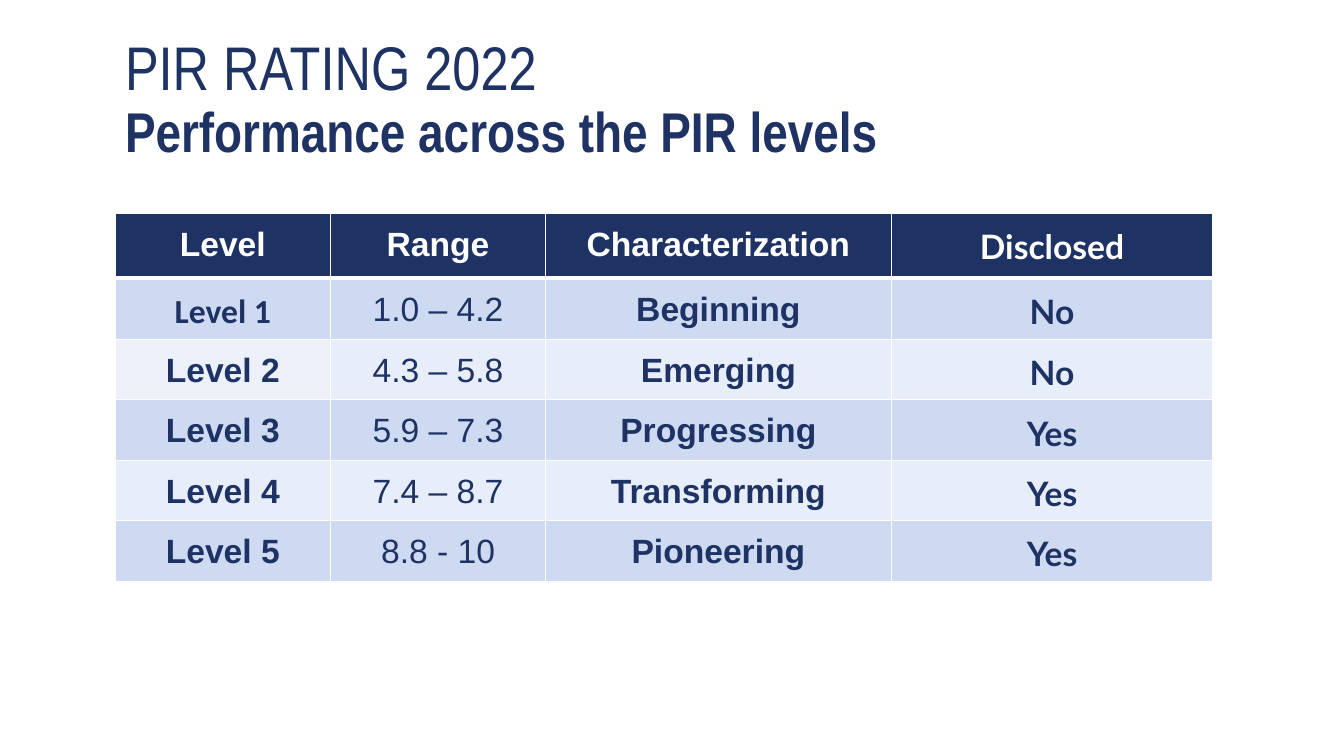
from lxml import etree
from pptx import Presentation
from pptx.dml.color import RGBColor
from pptx.enum.text import MSO_ANCHOR, MSO_AUTO_SIZE, PP_ALIGN
from pptx.oxml.ns import qn
from pptx.util import Inches, Pt

NAVY = RGBColor(0x1E, 0x32, 0x63)
WHITE = RGBColor(0xFF, 0xFF, 0xFF)
BAND = RGBColor(0xCD, 0xDA, 0xF2)
PALE_BAND = RGBColor(0xE7, 0xED, 0xF9)

COLUMN_WIDTHS = [2.14, 2.13, 3.43, 3.19]
COLUMN_FONTS = ["Arial", "Arial", "Arial", "Lato"]
HEADER_HEIGHT, LEVEL_HEIGHT = 0.64, 0.6
LEVELS = [
    ("Level", "Range", "Characterization", "Disclosed"),
    ("Level 1", "1.0 – 4.2", "Beginning", "No"),
    ("Level 2", "4.3 – 5.8", "Emerging", "No"),
    ("Level 3", "5.9 – 7.3", "Progressing", "Yes"),
    ("Level 4", "7.4 – 8.7", "Transforming", "Yes"),
    ("Level 5", "8.8 - 10", "Pioneering", "Yes"),
]
FIRST_COLUMN_OPACITY = {2: 40, 4: 46}


class RatingSlide:
    def __init__(self, presentation):
        self.slide = presentation.slides.add_slide(presentation.slide_layouts[5])
        self.title_font = "Arial Narrow"
        self.cell_size = Pt(24)
        self.cell_margin = Inches(0.07)

    def add_title(self, heading, subheading):
        title = self.slide.shapes.title
        title.left, title.top = Inches(1.14), Inches(0.28)
        title.width, title.height = Inches(11.38), Inches(1.45)
        frame = title.text_frame
        frame.auto_size = MSO_AUTO_SIZE.NONE
        frame.word_wrap = True
        frame.vertical_anchor = MSO_ANCHOR.MIDDLE
        paragraph = frame.paragraphs[0]
        paragraph.alignment = PP_ALIGN.LEFT
        paragraph.line_spacing = 0.9
        for text, size, bold in [(heading, 44, False), (subheading, 40, True)]:
            if paragraph.runs:
                paragraph.add_line_break()
            run = paragraph.add_run()
            run.text = text
            run.font.name = self.title_font
            run.font.size = Pt(size)
            run.font.bold = bold
            run.font.color.rgb = NAVY

    def add_levels_table(self, rows):
        height = HEADER_HEIGHT + LEVEL_HEIGHT * (len(rows) - 1)
        table = self.slide.shapes.add_table(
            len(rows), len(COLUMN_WIDTHS), Inches(1.14), Inches(2.12),
            Inches(sum(COLUMN_WIDTHS)), Inches(height)).table
        table.horz_banding = False
        for column, width in zip(table.columns, COLUMN_WIDTHS):
            column.width = Inches(width)
        for r, values in enumerate(rows):
            table.rows[r].height = Inches(LEVEL_HEIGHT if r else HEADER_HEIGHT)
            for c, value in enumerate(values):
                cell = table.cell(r, c)
                self.fill_cell(cell, r, c)
                self.write_cell(cell, value, r, c)
                self.border_cell(cell, r)

    def write_cell(self, cell, text, r, c):
        cell.margin_left = cell.margin_right = self.cell_margin
        cell.margin_top = cell.margin_bottom = self.cell_margin
        paragraph = cell.text_frame.paragraphs[0]
        paragraph.text = text
        paragraph.alignment = PP_ALIGN.CENTER
        paragraph.line_spacing = 1.15
        font = paragraph.font
        font.name = "Calibri" if text == "Level 1" else COLUMN_FONTS[c]
        font.size = self.cell_size
        font.bold = r == 0 or c != 1
        font.color.rgb = NAVY if r else WHITE

    def fill_cell(self, cell, r, c):
        opacity = FIRST_COLUMN_OPACITY.get(r) if c == 0 else None
        cell.fill.solid()
        if r == 0:
            cell.fill.fore_color.rgb = NAVY
        else:
            cell.fill.fore_color.rgb = BAND if r % 2 or opacity else PALE_BAND
        if opacity:
            color = cell._tc.tcPr.find(".//" + qn("a:srgbClr"))
            etree.SubElement(color, qn("a:alpha"), val=str(opacity * 1000))

    def border_cell(self, cell, r):
        """Draw white borders, with a heavier rule under the header."""
        widths = {"a:lnL": 1, "a:lnR": 1,
                  "a:lnT": 3 if r == 1 else 1, "a:lnB": 1 if r else 3}
        for position, (side, width) in enumerate(widths.items()):
            line = etree.Element(qn(side), w=str(Pt(width)))
            fill = etree.SubElement(line, qn("a:solidFill"))
            etree.SubElement(fill, qn("a:srgbClr"), val=str(WHITE))
            cell._tc.tcPr.insert(position, line)


def main():
    presentation = Presentation()
    presentation.slide_width = Inches(13.33)
    presentation.slide_height = Inches(7.5)
    rating = RatingSlide(presentation)
    rating.add_title("PIR RATING 2022", "Performance across the PIR levels")
    rating.add_levels_table(LEVELS)
    presentation.save("out.pptx")


if __name__ == "__main__":
    main()
